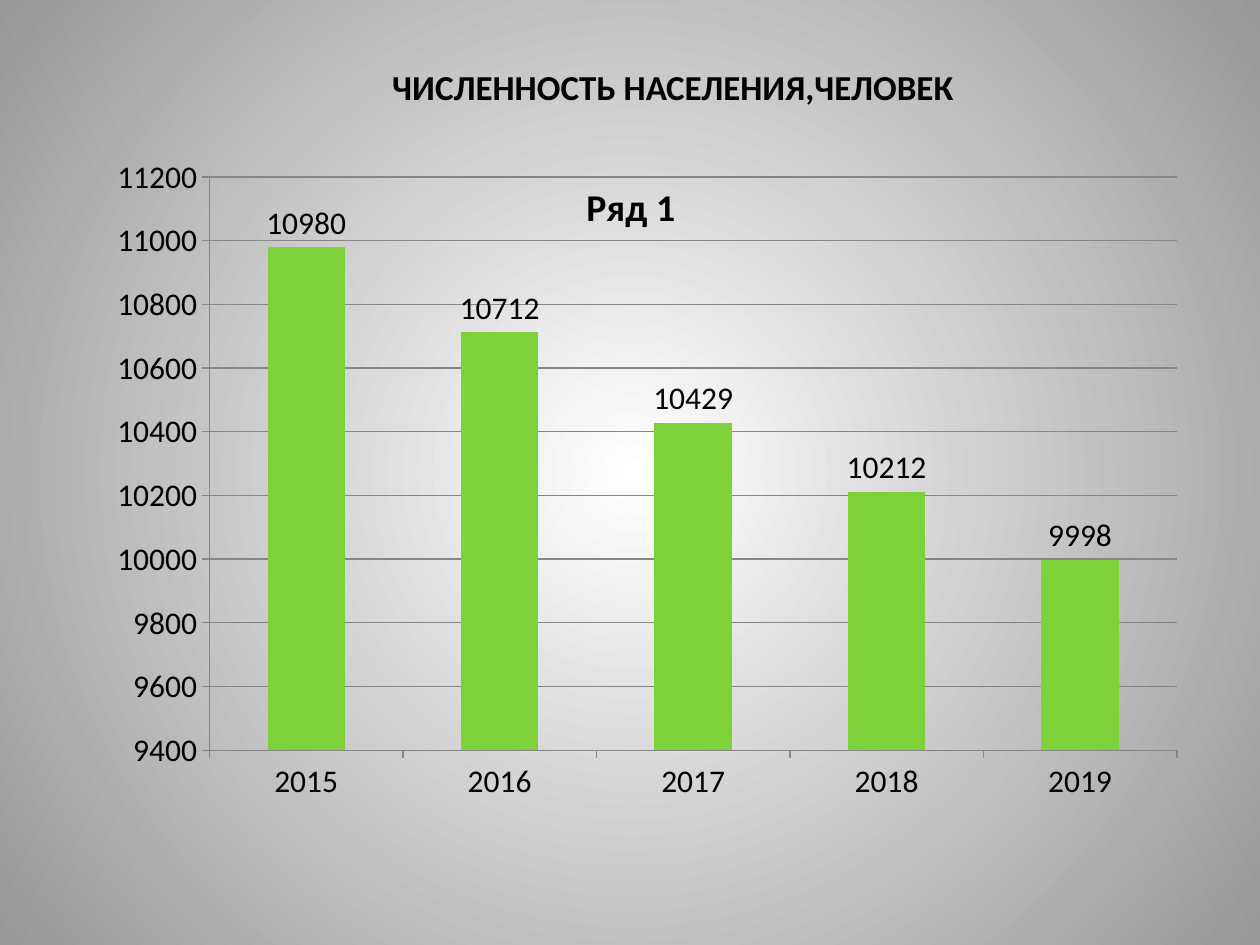
from lxml import etree
from pptx import Presentation
from pptx.chart.data import CategoryChartData
from pptx.dml.color import RGBColor
from pptx.enum.chart import XL_CHART_TYPE, XL_LABEL_POSITION, XL_TICK_MARK
from pptx.enum.text import MSO_AUTO_SIZE, PP_ALIGN
from pptx.oxml import parse_xml
from pptx.oxml.ns import nsdecls, qn
from pptx.util import Cm, Pt

COLUMN = XL_CHART_TYPE.COLUMN_CLUSTERED
ABOVE = XL_LABEL_POSITION.OUTSIDE_END
OUT, NONE = XL_TICK_MARK.OUTSIDE, XL_TICK_MARK.NONE
GROW = MSO_AUTO_SIZE.SHAPE_TO_FIT_TEXT
CENTER = PP_ALIGN.CENTER

FONT = "Calibri"
COLORS = {
    "text": "000000",
    "bar": "7FD13B",
    "grid": "868686",
    "glow": "FFFFFF",
    "edge": "979797",
}
YEARS = ["2015", "2016", "2017", "2018", "2019"]
PEOPLE = [10980, 10712, 10429, 10212, 9998]


class Page:
    def __init__(self, slide):
        self.slide = slide

    def color(self, name):
        return RGBColor.from_string(COLORS[name])

    def style(self, font, size, bold=False):
        font.name = FONT
        font.size = Pt(size)
        font.bold = bold
        font.color.rgb = self.color("text")

    def glow(self):
        fill = self.slide.background.fill
        fill.gradient()
        for stop, name in zip(fill.gradient_stops, ("glow", "edge")):
            stop.color.rgb = self.color(name)
        grad = self.slide.element.find(".//" + qn("a:gradFill"))
        grad.remove(grad.find(qn("a:lin")))
        ring = etree.SubElement(grad, qn("a:path"), {"path": "circle"})
        sides = dict.fromkeys("ltrb", "50000")
        etree.SubElement(ring, qn("a:fillToRect"), sides)

    def text(self, words, size, left, top, width, height):
        box = self.slide.shapes.add_textbox(left, top, width, height)
        frame = box.text_frame
        frame.word_wrap = True
        frame.auto_size = GROW
        frame.text = words
        line = frame.paragraphs[0]
        line.alignment = CENTER
        self.style(line.runs[0].font, size, True)

    def layout(self, parent, index, **parts):
        tags = "".join(f'<c:{tag} val="{val}"/>' for tag, val in parts.items())
        for old in parent.findall(qn("c:layout")):
            parent.remove(old)
        parent.insert(index, parse_xml(
            f'<c:layout {nsdecls("c")}><c:manualLayout>{tags}'
            "</c:manualLayout></c:layout>"))

    def axis(self, axis):
        axis.major_tick_mark = OUT
        axis.minor_tick_mark = NONE
        axis.format.line.color.rgb = self.color("grid")
        axis.format.line.width = Pt(0.75)
        self.style(axis.tick_labels.font, 18)

    def chart(self, name, cats, vals, left, top, width, height):
        data = CategoryChartData(number_format="General")
        data.categories = cats
        data.add_series(name, vals)
        chart = self.slide.shapes.add_chart(
            COLUMN, left, top, width, height, data).chart
        self.style(chart.font, 18)
        chart.has_legend = False

        chart.has_title = True
        title = chart.chart_title
        title.text_frame.text = name
        self.style(title.text_frame.paragraphs[0].runs[0].font, 21.6, True)
        title.include_in_layout = True
        self.layout(title._element, 1, xMode="edge", yMode="edge",
                    x=0.46, y=0.05)

        plot = chart.plots[0]
        plot.gap_width = 150
        plot.vary_by_categories = False
        fill = plot.series[0].format.fill
        fill.solid()
        fill.fore_color.rgb = self.color("bar")
        plot.has_data_labels = True
        labels = plot.data_labels
        labels.show_value = True
        labels.position = ABOVE
        self.style(labels.font, 18)
        area = chart._chartSpace.find(".//" + qn("c:plotArea"))
        self.layout(area, 0, layoutTarget="inner", xMode="edge", yMode="edge",
                    x=0.133, y=0.056, w=0.855, h=0.808)

        self.axis(chart.category_axis)
        scale = chart.value_axis
        self.axis(scale)
        scale.minimum_scale = 9400
        scale.maximum_scale = 11200
        scale.major_unit = 200
        scale.has_major_gridlines = True
        grid = scale.major_gridlines.format.line
        grid.color.rgb = self.color("grid")
        grid.width = Pt(0.75)


def main():
    deck = Presentation()
    deck.slide_width, deck.slide_height = Cm(25.4), Cm(19.05)
    page = Page(deck.slides.add_slide(deck.slide_layouts[6]))
    page.glow()
    page.chart("Ряд 1", YEARS, PEOPLE,
               Cm(1.19), Cm(2.77), Cm(22.81), Cm(14.3))
    page.text(" ЧИСЛЕННОСТЬ НАСЕЛЕНИЯ,ЧЕЛОВЕК", 20,
              Cm(4.17), Cm(1.19), Cm(18.64), Cm(1.12))
    deck.save("out.pptx")


if __name__ == "__main__":
    main()
